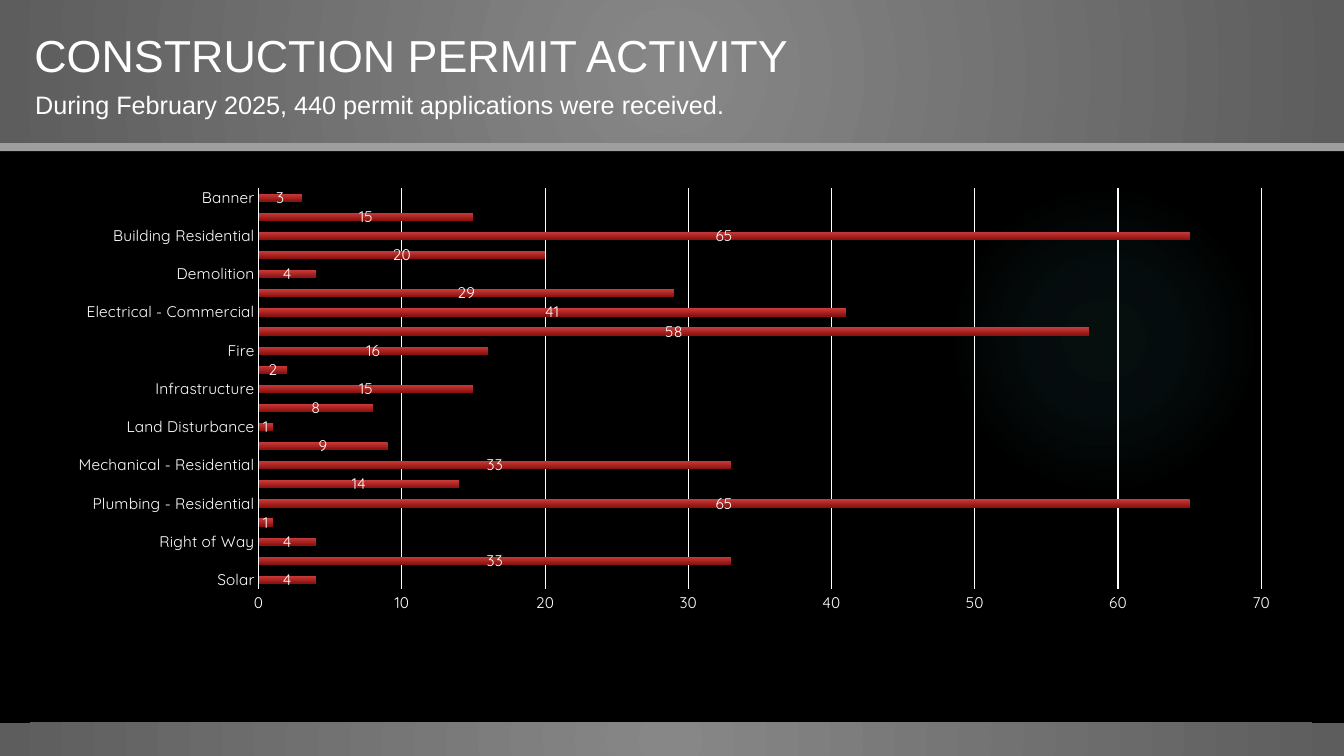
import pptx
import pptx.chart.data
import pptx.dml.color
import pptx.enum.chart
import pptx.enum.shapes
import pptx.enum.text
import pptx.oxml
import pptx.oxml.ns
import pptx.util

Inches, Pt = pptx.util.Inches, pptx.util.Pt
COLORS = {
    "black": "000000", "white": "FFFFFF", "rule": "9F9F9F",
    "band_center": "878787", "band_edge": "5D5D5D", "glow": "50B9C1",
    "bar_top": "C93B3A", "bar_bottom": "8D110F",
}
PERMITS = [
    ("Solar", 4), ("Sign", 33), ("Right of Way", 4), ("Pool", 1),
    ("Plumbing - Residential", 65), ("Plumbing - Commercial", 14),
    ("Mechanical - Residential", 33), ("Mechanical - Commercial", 9),
    ("Land Disturbance", 1), ("Irrigation", 8), ("Infrastructure", 15),
    ("Generators", 2), ("Fire", 16), ("Electrical - Residential", 58),
    ("Electrical - Commercial", 41), ("Development", 29), ("Demolition", 4),
    ("Certificate of Occupancy", 20), ("Building Residential", 65),
    ("Building - Commercial", 15), ("Banner", 3),
]


def rgb(name):
    return pptx.dml.color.RGBColor.from_string(COLORS[name])


class PermitSlide:
    """Holds the style and the current slide."""
    text_font, chart_font = "Arial", "Quicksand"

    def __init__(self, prs):
        self.slide = prs.slides.add_slide(prs.slide_layouts[5])
        self.shapes = self.slide.shapes
        fill = self.slide.background.fill
        fill.solid()
        fill.fore_color.rgb = rgb("black")

    def shape(self, kind, box, color=None, stops=None):
        """Flat shape, or one with a radial gradient of (percent, color, alpha)."""
        sp = self.shapes.add_shape(kind, *map(Inches, box))
        sp.shadow.inherit = False
        sp.line.fill.background()
        if color:
            sp.fill.solid()
            sp.fill.fore_color.rgb = rgb(color)
            return sp
        sp.fill.gradient()
        grad = sp.element.spPr.find(pptx.oxml.ns.qn("a:gradFill"))
        gs = "".join(
            f'<a:gs pos="{pos * 1000}"><a:srgbClr val="{COLORS[name]}">'
            f'<a:alpha val="{alpha * 1000}"/></a:srgbClr></a:gs>'
            for pos, name, alpha in stops)
        grad.getparent().replace(grad, pptx.oxml.parse_xml(
            f'<a:gradFill {pptx.oxml.ns.nsdecls("a")} rotWithShape="1">'
            f'<a:gsLst>{gs}</a:gsLst><a:path path="circle">'
            '<a:fillToRect l="50000" t="50000" r="50000" b="50000"/>'
            '</a:path></a:gradFill>'))
        return sp

    def band(self, box):
        stops = [(0, "band_center", 100), (100, "band_edge", 100)]
        return self.shape(pptx.enum.shapes.MSO_SHAPE.RECTANGLE, box, stops=stops)

    def set_text(self, sp, box, text, size):
        sp.left, sp.top, sp.width, sp.height = map(Inches, box)
        tf = sp.text_frame
        tf.word_wrap = True
        tf.vertical_anchor = pptx.enum.text.MSO_ANCHOR.TOP
        tf.text = text
        p = tf.paragraphs[0]
        p.alignment = pptx.enum.text.PP_ALIGN.LEFT
        self.style(p.font, size, self.text_font)

    def title(self, box, text, size):
        sp = self.shapes.title
        self.shapes.element.append(sp.element)  # in front of the header band
        self.set_text(sp, box, text, size)

    def text(self, box, text, size):
        sp = self.shapes.add_textbox(*map(Inches, box))
        self.set_text(sp, box, text, size)

    def style(self, font, size, name):
        font.size, font.name = Pt(size), name
        font.color.rgb = rgb("white")

    def bar_chart(self, box, rows, plot_box):
        data = pptx.chart.data.CategoryChartData()
        data.categories = [name for name, count in rows]
        data.add_series("Series 1", [count for name, count in rows])
        chart = self.shapes.add_chart(
            pptx.enum.chart.XL_CHART_TYPE.BAR_STACKED,
            *map(Inches, box), data).chart
        chart.has_legend = chart.has_title = False
        self.style(chart.font, 11, self.chart_font)

        # Bars and value labels
        plot = chart.plots[0]
        plot.gap_width, plot.overlap = 150, 100
        plot.vary_by_categories = False
        fill = plot.series[0].format.fill
        fill.gradient()
        fill.gradient_angle = 270
        for stop, name in zip(fill.gradient_stops, ("bar_top", "bar_bottom")):
            stop.color.rgb = rgb(name)
        plot.has_data_labels = True
        plot.data_labels.show_value = True
        self.style(plot.data_labels.font, 11, self.chart_font)

        # Axes and grid
        cat, val = chart.category_axis, chart.value_axis
        for axis in (cat, val):
            axis.major_tick_mark = pptx.enum.chart.XL_TICK_MARK.NONE
            axis.minor_tick_mark = pptx.enum.chart.XL_TICK_MARK.NONE
            self.style(axis.tick_labels.font, 11, self.chart_font)
        val.minimum_scale, val.maximum_scale, val.major_unit = 0, 70, 10
        val.format.line.fill.background()
        val.has_major_gridlines = True
        for line, width in ((cat.format.line, 1),
                            (val.major_gridlines.format.line, 0.75)):
            line.color.rgb = rgb("white")
            line.width = Pt(width)

        # Fixed inner plot area, as fractions of the chart
        area = chart.element.find(".//" + pptx.oxml.ns.qn("c:plotArea")) \
            if hasattr(chart, "element") else plot.series[0].format
        for old in area.findall(pptx.oxml.ns.qn("c:layout")):
            area.remove(old)
        sizes = "".join(f'<c:{tag} val="{v}"/>'
                        for tag, v in zip("xywh", plot_box))
        area.insert(0, pptx.oxml.parse_xml(
            f'<c:layout {pptx.oxml.ns.nsdecls("c")}><c:manualLayout>'
            '<c:layoutTarget val="inner"/><c:xMode val="edge"/>'
            f'<c:yMode val="edge"/>{sizes}</c:manualLayout></c:layout>'))


def main():
    prs = pptx.Presentation()
    prs.slide_width, prs.slide_height = Inches(13.33), Inches(7.5)
    s = PermitSlide(prs)

    # Background glow
    s.shape(pptx.enum.shapes.MSO_SHAPE.OVAL, (9.41, 1.83, 3.08, 3.08),
            stops=[(0, "glow", 7), (36, "glow", 6), (69, "glow", 0)])

    # Header and footer
    s.band((-0.01, -0.01, 13.34, 1.43))
    s.title((0.24, 0.22, 12.84, 0.64), "CONSTRUCTION PERMIT ACTIVITY", 32)
    s.shape(pptx.enum.shapes.MSO_SHAPE.RECTANGLE, (-0.01, 1.42, 13.34, 0.08),
            color="rule")
    s.band((-0.02, 7.17, 13.35, 0.33))
    s.text((0.25, 0.84, 12.84, 0.4),
           "During February 2025, 440 permit applications were received.", 18)

    # Permit applications by type
    s.bar_chart((0.16, 1.62, 13, 5.46), PERMITS, (0.185, 0.045, 0.765, 0.729))
    prs.save("out.pptx")


if __name__ == "__main__":
    main()
